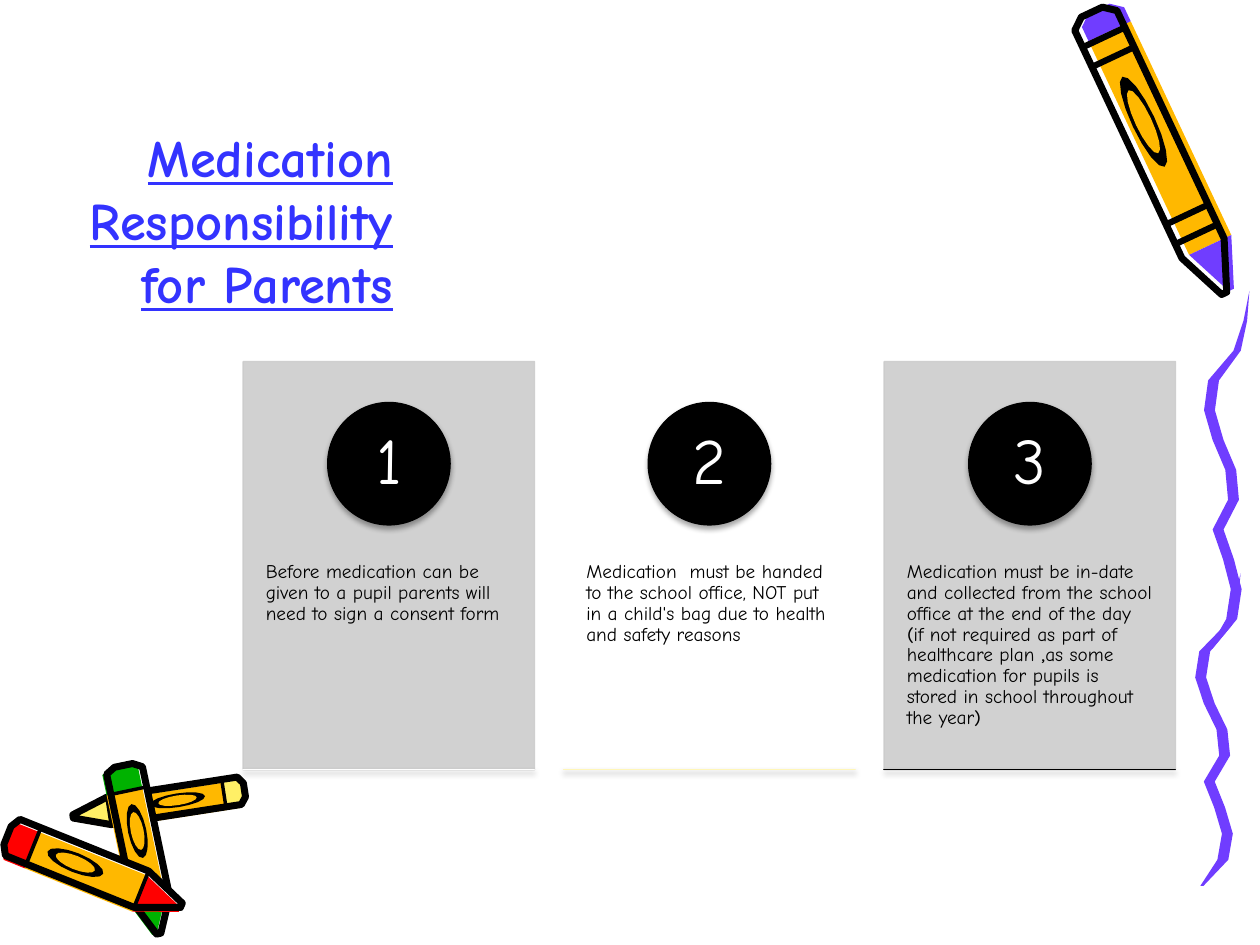
import dataclasses
import math

import pptx
import pptx.dml.color
import pptx.enum.shapes
import pptx.enum.text
import pptx.oxml
import pptx.oxml.ns
import pptx.util

BODY_FONT, MARK_FONT = "Comic Neue", "Karla"
BLACK, WHITE, GREY, BLUE = "000000", "FFFFFF", "CCCCCC", "3333FF"
PURPLE, ORANGE, RED, GREEN, CREAM = "703DFF", "FFB800", "FF0000", "00B200", "FFEF66"
NAMESPACE = pptx.oxml.ns.nsdecls("a")
SQUIGGLE_BENDS = [0.99, 0.9, 0.72, 0.2, 0.11, 0.3, 0.58, 0.64, 0.3, 0.53, 0.7, 0.6, 0.14]

CARDS = [
    (GREY, WHITE, "Before medication can be given to a pupil parents will need to sign a consent form"),
    (WHITE, "FFF6B8", "Medication  must be handed to the school office, NOT put in a child's bag "
     "due to health and safety reasons"),
    (GREY, BLACK, "Medication must be in-date and collected from the school office at the end of the day "
     "|(|if not required as part of  healthcare plan |,|as some medication for pupils is stored "
     "in school throughout the year|)"),
]


@dataclasses.dataclass
class Crayon:
    """A crayon from tail to tip in shares of a box; cap, shoulder and bands are shares of its length."""
    tail: tuple
    tip: tuple
    thickness: float
    wax: str
    shift: float
    cap: float
    shoulder: float
    bands: tuple


LONE_CRAYON = Crayon((0.19, 0.04), (0.94, 0.97), 0.37, PURPLE, 0.17, 0.08, 0.84, (0.09, 0.16, 0.72, 0.79))
CRAYON_PILE = [
    Crayon((0.97, 0.18), (0.29, 0.32), 0.22, CREAM, 0.12, 0.12, 0.79, (0.12, 0.79)),
    Crayon((0.49, 0.05), (0.63, 0.94), 0.29, GREEN, -0.12, 0.15, 0.8, (0.15, 0.8)),
    Crayon((0.03, 0.42), (0.72, 0.79), 0.31, RED, -0.12, 0.15, 0.77, (0.15, 0.77)),
]


def colour(value):
    """Turn a hex string into a colour."""
    return pptx.dml.color.RGBColor.from_string(value)


def inches(*lengths):
    """Turn lengths in inches into a list of slide units."""
    return [pptx.util.Inches(length) for length in lengths]


def at_share(box, across, down):
    """Find the point at the given shares of a box."""
    return box[0] + across * box[2], box[1] + down * box[3]


def add_outline(page, points, fill=None, ink=None):
    """Draw a closed outline through points, filled or inked with a line."""
    places = [inches(*point) for point in points]
    builder = page.shapes.build_freeform(*places[0])
    builder.add_line_segments(places[1:], close=True)
    shape = builder.convert_to_shape()
    shape.shadow.inherit = False
    if fill:
        shape.fill.solid()
        shape.fill.fore_color.rgb = colour(fill)
    else:
        shape.fill.background()
    if ink:
        shape.line.color.rgb = colour(BLACK)
        shape.line.width = pptx.util.Pt(ink)
    else:
        shape.line.fill.background()


def add_crayon(page, box, crayon):
    """Draw a crayon as paper, shifted colours, ink line, bands and an oval label."""
    tail, tip = at_share(box, *crayon.tail), at_share(box, *crayon.tip)
    run, rise = tip[0] - tail[0], tip[1] - tail[1]
    length = math.hypot(run, rise)
    side_x, side_y = (rise / length * crayon.thickness, -run / length * crayon.thickness)

    def place(outline, shift=0):
        return [(tail[0] + along * run + (across + shift) * side_x,
                 tail[1] + along * rise + (across + shift) * side_y) for along, across in outline]

    def strip(start, end):
        return [(start, -0.5), (start, 0.5), (end, 0.5), (end, -0.5)]

    def oval(scale):
        turns = [math.tau * step / 16 for step in range(16)]
        return [(0.39 + 0.16 * scale * math.cos(turn), 0.25 * scale * math.sin(turn)) for turn in turns]

    rounded_end = [(0.03, -0.5), (0, -0.25), (0, 0.25), (0.03, 0.5)]
    point = [(crayon.shoulder, 0.5), (1, 0.06), (1, -0.06), (crayon.shoulder, -0.5)]
    silhouette = rounded_end + point
    cap = rounded_end + [(crayon.cap, 0.5), (crayon.cap, -0.5)]

    add_outline(page, place(silhouette), WHITE)
    for outline, fill in ((strip(crayon.cap, crayon.shoulder), ORANGE), (cap, crayon.wax), (point, crayon.wax)):
        add_outline(page, place(outline, crayon.shift), fill)
    add_outline(page, place(silhouette), ink=4)
    for band in crayon.bands:
        add_outline(page, place(strip(band - 0.01, band + 0.01)), BLACK)
    for scale, fill in ((1, BLACK), (0.7, ORANGE)):
        add_outline(page, place(oval(scale)), fill)


def add_squiggle(page, box):
    """Draw a ribbon through evenly spaced bends, pointed at the top."""
    last = len(SQUIGGLE_BENDS) - 1
    left_edge, right_edge = [], []
    for index, bend in enumerate(SQUIGGLE_BENDS):
        half = 0.12 * min(1, index / 3, (last + 0.4 - index) / 1.4)
        left_edge.append(at_share(box, bend - half, index / last))
        right_edge.append(at_share(box, bend + half, index / last))
    add_outline(page, left_edge + right_edge[::-1], PURPLE)


def add_solid(page, kind, box, fill, line, opacity=100, shadow=False):
    """Add a filled and outlined preset shape, with a soft shadow below it if asked."""
    shape = page.shapes.add_shape(kind, *inches(*box))
    shape.shadow.inherit = False
    shape.fill.solid()
    shape.fill.fore_color.rgb = colour(fill)
    shape.line.color.rgb = colour(line)
    shape.line.width = pptx.util.Pt(0.75)
    properties = shape._element.spPr
    if opacity < 100:
        for shade in properties.iter(pptx.oxml.ns.qn("a:srgbClr")):
            shade.append(pptx.oxml.parse_xml(f'<a:alpha {NAMESPACE} val="{opacity * 1000}"/>'))
    if shadow:
        properties.find(pptx.oxml.ns.qn("a:effectLst")).append(pptx.oxml.parse_xml(
            f'<a:outerShdw {NAMESPACE} blurRad="39370" dist="22860" dir="5400000" rotWithShape="0">'
            f'<a:srgbClr val="{BLACK}"><a:alpha val="35000"/></a:srgbClr></a:outerShdw>'))


def format_span(span, size, shade, font=BODY_FONT):
    """Set the font, size and colour of a run."""
    span.font.name = font
    span.font.size = pptx.util.Pt(size)
    span.font.color.rgb = colour(shade)


def add_text(page, box, text, size, shade, insets, align, anchor):
    """Add a wrapped text box whose bars switch between the body and mark fonts."""
    frame = page.shapes.add_textbox(*inches(*box)).text_frame
    frame.word_wrap = True
    frame.auto_size = pptx.enum.text.MSO_AUTO_SIZE.NONE
    frame.vertical_anchor = anchor
    frame.margin_left = frame.margin_right = pptx.util.Inches(insets[0])
    frame.margin_top = frame.margin_bottom = pptx.util.Inches(insets[1])
    para = frame.paragraphs[0]
    para.alignment = align
    para.line_spacing = 0.9
    for index, part in enumerate(text.split("|")):
        span = para.add_run()
        span.text = part
        format_span(span, size, shade, (BODY_FONT, MARK_FONT)[index % 2])


def fill_title(page, box, text):
    """Place and format the title."""
    title = page.shapes.title
    title.left, title.top, title.width, title.height = inches(*box)
    frame = title.text_frame
    frame.text = text
    frame.word_wrap = True
    frame.auto_size = pptx.enum.text.MSO_AUTO_SIZE.NONE
    frame.vertical_anchor = pptx.enum.text.MSO_ANCHOR.BOTTOM
    para = frame.paragraphs[0]
    para.alignment = pptx.enum.text.PP_ALIGN.RIGHT
    span = para.runs[0]
    format_span(span, 30, BLUE)
    span.font.bold = span.font.underline = True


def add_card(page, box, number, fill, rule, text):
    """Add a card with a numbered disc, its text and a rule along the foot."""
    left, top, width, height = box
    shapes, align, anchor = pptx.enum.shapes.MSO_SHAPE, pptx.enum.text.PP_ALIGN, pptx.enum.text.MSO_ANCHOR
    middle, disc_centre = at_share(box, 0.5, 0.25)

    def square(side):
        return middle - side / 2, disc_centre - side / 2, side, side

    add_solid(page, shapes.RECTANGLE, box, fill, fill, opacity=90)
    add_text(page, (left, top + 0.38 * height, width, 0.6 * height), text, 11, BLACK,
             (0.18, 0.36), align.LEFT, anchor.TOP)
    add_solid(page, shapes.OVAL, square(0.3 * height), BLACK, BLACK, shadow=True)
    add_text(page, square(0.21 * height), str(number), 37, WHITE, (0.08, 0.01), align.CENTER, anchor.MIDDLE)
    add_solid(page, shapes.RECTANGLE, (left, top + height, width, 0), rule, rule, shadow=True)


def add_cards(page, box, cards):
    """Share a box among equal cards with a gap of a tenth of a card."""
    left, top, width, height = box
    card_width = width / (1.1 * len(cards) - 0.1)
    for index, card in enumerate(cards):
        add_card(page, (left + 1.1 * index * card_width, top, card_width, height), index + 1, *card)


def main():
    """Build the slide and save the deck."""
    deck = pptx.Presentation()
    deck.slide_width, deck.slide_height = inches(10, 7.5)
    page = deck.slides.add_slide(deck.slide_layouts[5])
    fill_title(page, (0.2, 0.57, 3.02, 1.97), "Medication Responsibility for Parents")
    for crayon in CRAYON_PILE:
        add_crayon(page, (0, 6, 2, 1.5), crayon)
    for box in ((9.49, 4.55, 0.36, 2.48), (9.56, 2.31, 0.36, 2.84)):
        add_squiggle(page, box)
    add_crayon(page, (8.4, 0, 1.4, 2.4), LONE_CRAYON)
    add_cards(page, (1.93, 2.87, 7.4, 3.24), CARDS)
    deck.save("out.pptx")


if __name__ == "__main__":
    main()
